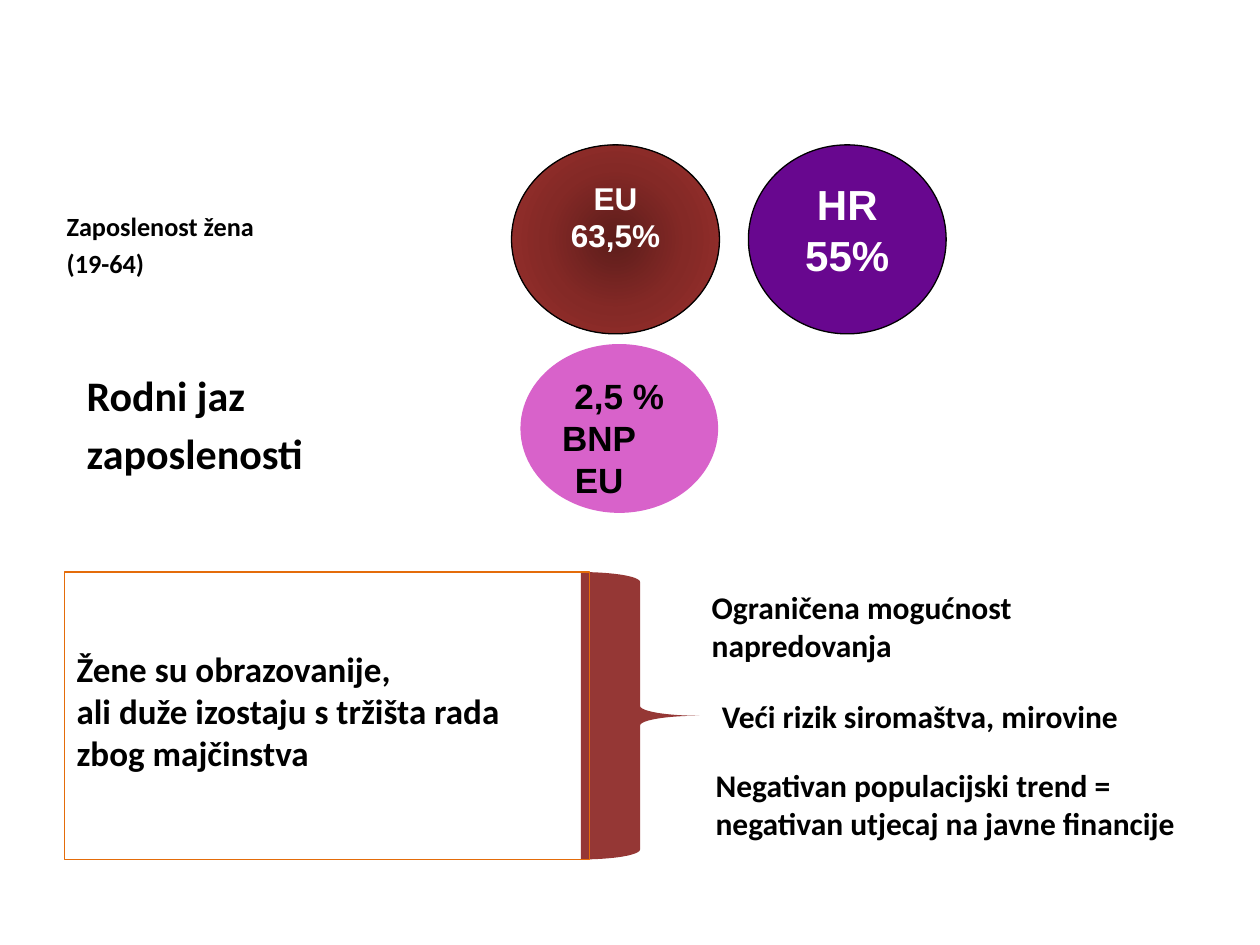
import pptx
import pptx.util
import pptx.dml.color
import pptx.enum.shapes
import pptx.enum.text
import pptx.oxml
import pptx.oxml.ns

Pt = pptx.util.Pt
SHAPES = pptx.enum.shapes.MSO_SHAPE
ALIGN = pptx.enum.text.PP_ALIGN

COLORS = {
    "black": "000000", "white": "FFFFFF", "purple": "68078F", "pink": "D862CA",
    "brown": "953735", "orange": "E46C0A",
}
RADIAL_STOPS = [(0, "5D1D1B"), (50, "842926"), (100, "9C302E")]

# Content: lines, (left, top, width, height), text size, share of size added before each line
LABELS = [
    (["Zaposlenost žena", "(19-64)"], (31, 116.6, 243.4, 40.3), 15, 0.2),
    (["Rodni jaz", "zaposlenosti"], (42.5, 207.4, 187.2, 33.8), 24, 0.2),
    (["Žene su obrazovanije,", "ali duže izostaju s tržišta rada", "zbog majčinstva"],
     (36.7, 366.5, 305.3, 79.9), 20, 0),
    (["Ograničena mogućnost", "napredovanja"], (399.6, 332.6, 217.4, 51.1), 18, 0),
    (["Veći rizik siromaštva, mirovine"], (405.4, 394.6, 279.4, 28.8), 18, 0),
    (["Negativan populacijski trend =", "negativan utjecaj na javne financije"],
     (401.8, 434.2, 318.2, 51.1), 18, 0),
]
# Content: lines, box, text size, text colour, fill (None = radial), outline
CIRCLES = [
    (["EU 63,5%"], (292.3, 82.8, 118.8, 108), 18, "white", None, "black"),
    (["HR", "55%"], (427.7, 82.8, 113, 108), 24, "white", "purple", "black"),
    (["2,5 %", "BNP", "EU"], (297.4, 196.6, 113, 96.5), 20, "black", "pink", None),
]
BRACE_BOX = (331.9, 326.9, 67.7, 164.2)
FRAME_BOX = (36.7, 326.9, 300.2, 164.2)
BNP_RIGHT_MARGIN = 23


def rgb(name):
    return pptx.dml.color.RGBColor.from_string(COLORS[name])


def write_lines(shape, lines, font, size, color, alignment, spacing=0):
    frame = shape.text_frame
    frame.word_wrap = True
    frame.vertical_anchor = pptx.enum.text.MSO_ANCHOR.TOP
    frame.text = "\n".join(lines)
    for paragraph in frame.paragraphs:
        paragraph.alignment = alignment
        paragraph.space_before = Pt(size * spacing)
        for run in paragraph.runs:
            run.font.name = font
            run.font.size = Pt(size)
            run.font.bold = True
            run.font.color.rgb = rgb(color)


def add_shape(slide, kind, box, fill=None, outline=None):
    shape = slide.shapes.add_shape(kind, *map(Pt, box))
    shape.shadow.inherit = False
    if fill:
        shape.fill.solid()
        shape.fill.fore_color.rgb = rgb(fill)
    else:
        shape.fill.background()
    if outline:
        shape.line.color.rgb = rgb(outline)
        shape.line.width = Pt(0.75)
    else:
        shape.line.fill.background()
    return shape


def fill_radial(shape):
    stops = "".join(
        f'<a:gs pos="{position * 1000}"><a:srgbClr val="{color}"/></a:gs>'
        for position, color in RADIAL_STOPS)
    gradient = pptx.oxml.parse_xml(
        f'<a:gradFill {pptx.oxml.ns.nsdecls("a")} rotWithShape="1"><a:gsLst>{stops}</a:gsLst>'
        '<a:path path="circle"><a:fillToRect l="50000" t="50000" r="50000" b="50000"/></a:path>'
        '</a:gradFill>')
    properties = shape.element.spPr
    properties.replace(properties.find(pptx.oxml.ns.qn("a:noFill")), gradient)


def main():
    presentation = pptx.Presentation()
    presentation.slide_width, presentation.slide_height = Pt(720), Pt(540)
    slide = presentation.slides.add_slide(presentation.slide_layouts[6])

    # Text labels
    for lines, box, size, spacing in LABELS:
        label = slide.shapes.add_textbox(*map(Pt, box))
        write_lines(label, lines, "Calibri", size, "black", ALIGN.LEFT, spacing)

    # Figures in circles
    for lines, box, size, color, fill, outline in CIRCLES:
        circle = add_shape(slide, SHAPES.OVAL, box, fill, outline)
        if fill is None:
            fill_radial(circle)
        write_lines(circle, lines, "Arial", size, color, ALIGN.CENTER)
        for paragraph in circle.text_frame.paragraphs:
            if paragraph.text == "BNP":
                paragraph._p.get_or_add_pPr().set("marR", str(Pt(BNP_RIGHT_MARGIN)))

    # Brace and frame around the cause
    add_shape(slide, SHAPES.RIGHT_BRACE, BRACE_BOX, "brown")
    add_shape(slide, SHAPES.RECTANGLE, FRAME_BOX, outline="orange")

    presentation.save("out.pptx")


if __name__ == "__main__":
    main()
